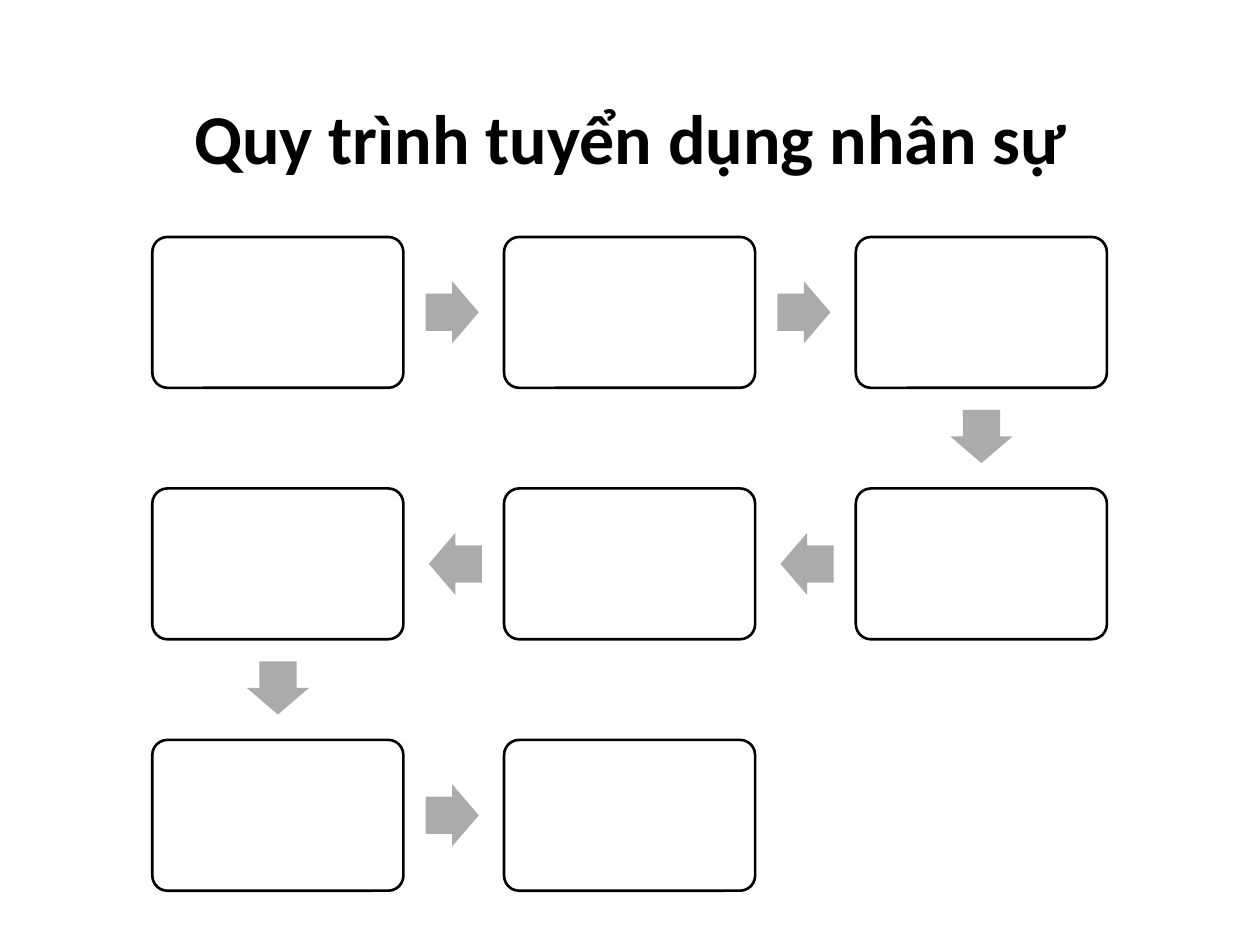
import pptx
import pptx.dml.color
import pptx.enum.shapes
import pptx.enum.text
import pptx.util

Pt = pptx.util.Pt
SHAPES = pptx.enum.shapes.MSO_SHAPE

COLUMNS = 3
STEP_COUNT = 8
FIRST_CENTER = (158.8, 178.5)
PITCH = (201, 143.7)
STEP_SIZE = (143.5, 86.2)
ARROW_SIZE = (30.4, 35.5)
ARROW_SETBACK = 0.9  # arrows sit slightly nearer the step they leave


def color(hex_code):
    return pptx.dml.color.RGBColor.from_string(hex_code)


class ProcessSlide:
    font = "Calibri"
    ink = "000000"
    step_fill = "FFFFFF"
    arrow_fill = "ABABAB"

    def __init__(self, slide):
        self.slide = slide

    def title(self, text, left, top, width, height):
        heading = self.slide.shapes.add_textbox(Pt(left), Pt(top), Pt(width), Pt(height))
        frame = heading.text_frame
        frame.word_wrap = True
        frame.vertical_anchor = pptx.enum.text.MSO_ANCHOR.MIDDLE
        paragraph = frame.paragraphs[0]
        paragraph.alignment = pptx.enum.text.PP_ALIGN.CENTER
        paragraph.line_spacing = 0.9
        run = paragraph.add_run()
        run.text = text
        run.font.name = self.font
        run.font.size = Pt(40)
        run.font.bold = True
        run.font.color.rgb = color(self.ink)

    def centered(self, preset, center, size, fill, adjustments):
        """Add a filled preset shape around its center point."""
        left, top = (c - s / 2 for c, s in zip(center, size))
        shape = self.slide.shapes.add_shape(preset, Pt(left), Pt(top), Pt(size[0]), Pt(size[1]))
        shape.shadow.inherit = False
        shape.fill.solid()
        shape.fill.fore_color.rgb = color(fill)
        for index, value in enumerate(adjustments):
            shape.adjustments[index] = value
        return shape

    def step(self, center):
        box = self.centered(SHAPES.ROUNDED_RECTANGLE, center, STEP_SIZE, self.step_fill, [0.1])
        box.line.color.rgb = color(self.ink)
        box.line.width = Pt(1.5)

    def arrow(self, start, end):
        """Point from one step center to the next, along a row or down."""
        dx, dy = end[0] - start[0], end[1] - start[1]
        distance = abs(dx) + abs(dy)
        share = 0.5 - ARROW_SETBACK / distance
        center = (start[0] + dx * share, start[1] + dy * share)
        arrow = self.centered(SHAPES.RIGHT_ARROW, center, ARROW_SIZE, self.arrow_fill, [0.6, 0.5])
        arrow.line.fill.background()
        arrow.rotation = 90 if dy > 1 else 180 if dx < 0 else 0


def step_center(index):
    """Steps snake through the grid: every second row runs right to left."""
    row, column = divmod(index, COLUMNS)
    if row % 2:
        column = COLUMNS - 1 - column
    return FIRST_CENTER[0] + column * PITCH[0], FIRST_CENTER[1] + row * PITCH[1]


def main():
    presentation = pptx.Presentation()
    presentation.slide_width = Pt(720)
    presentation.slide_height = Pt(540)
    recruitment = ProcessSlide(presentation.slides.add_slide(presentation.slide_layouts[6]))

    recruitment.title("Quy trình tuyển dụng nhân sự", 49.5, 28.8, 621, 104.4)
    centers = [step_center(index) for index in range(STEP_COUNT)]
    for index, center in enumerate(centers):
        if index:
            recruitment.arrow(centers[index - 1], center)
        recruitment.step(center)

    presentation.save("out.pptx")


if __name__ == "__main__":
    main()
